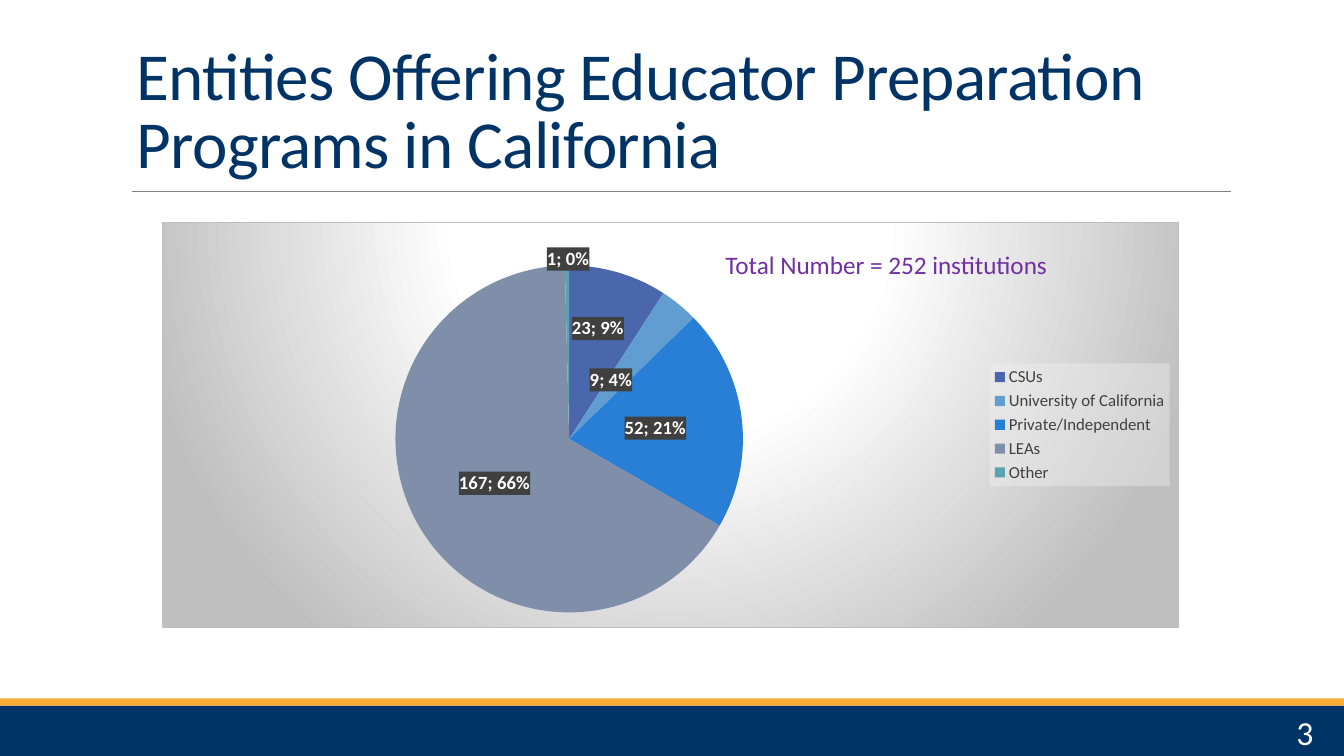
from dataclasses import dataclass
from typing import NamedTuple

from pptx import Presentation
from pptx.chart.data import CategoryChartData
from pptx.dml.color import RGBColor
from pptx.enum.chart import XL_CHART_TYPE, XL_LABEL_POSITION, XL_LEGEND_POSITION
from pptx.enum.shapes import MSO_CONNECTOR, MSO_SHAPE
from pptx.enum.text import MSO_ANCHOR, PP_ALIGN
from pptx.oxml import parse_xml
from pptx.oxml.ns import nsdecls, qn
from pptx.util import Cm, Pt


@dataclass(frozen=True)
class Theme:
    """Colours, type sizes and font of the slide."""
    font: str = "Calibri"
    navy: str = "003366"
    gold: str = "FAAC35"
    rule: str = "808080"
    white: str = "FFFFFF"
    purple: str = "7030A0"
    silver: str = "BFBFBF"
    dark: str = "404040"
    pale: str = "F2F2F2"
    title_size: float = 48
    number_size: float = 24
    note_size: float = 18
    label_size: float = 13.3
    legend_size: float = 12


class Box(NamedTuple):
    """A region of the slide in centimetres."""
    left: float
    top: float
    width: float
    height: float

    def lengths(self):
        """Return the four values as lengths."""
        return [Cm(value) for value in self]


THEME = Theme()
INSTITUTIONS = {
    "CSUs": (23, "4A66AC"),
    "University of California": (9, "629DD1"),
    "Private/Independent": (52, "297FD5"),
    "LEAs": (167, "7F8FA9"),
    "Other": (1, "5AA2AE"),
}
LABEL_SHIFTS = {0: (0.004, -0.067), 1: (-0.013, 0.02), 4: (0, -0.23)}


def style_font(font, size, colour, bold=False):
    """Apply the theme font with a size and colour."""
    font.name = THEME.font
    font.size = Pt(size)
    font.bold = bold
    font.color.rgb = RGBColor.from_string(colour)


def add_text(slide, box, text, size, colour, anchor=MSO_ANCHOR.TOP, align=PP_ALIGN.LEFT):
    """Add one wrapped paragraph and return it."""
    frame = slide.shapes.add_textbox(*box.lengths()).text_frame
    frame.word_wrap = True
    frame.vertical_anchor = anchor
    frame.text = text
    paragraph = frame.paragraphs[0]
    paragraph.alignment = align
    style_font(paragraph.runs[0].font, size, colour)
    return paragraph


def add_band(slide, box, colour):
    """Add a plain filled rectangle."""
    band = slide.shapes.add_shape(MSO_SHAPE.RECTANGLE, *box.lengths())
    band.shadow.inherit = False
    band.fill.solid()
    band.fill.fore_color.rgb = RGBColor.from_string(colour)
    band.line.fill.background()


def add_heading(slide, box):
    """Add the title and the rule beneath it."""
    title = add_text(slide, box, "Entities Offering Educator Preparation Programs in California",
                     THEME.title_size, THEME.navy, MSO_ANCHOR.BOTTOM)
    title.line_spacing = 0.85
    title.runs[0].font._element.set("spc", "-50")
    rule_y = Cm(box.top + box.height + 0.11)
    rule = slide.shapes.add_connector(MSO_CONNECTOR.STRAIGHT, Cm(box.left + 0.13), rule_y,
                                      Cm(box.left + box.width - 0.13), rule_y)
    rule.line.color.rgb = RGBColor.from_string(THEME.rule)
    rule.line.width = Pt(0.5)
    rule._element.spPr.append(parse_xml(f'<a:effectLst {nsdecls("a")}/>'))


def add_footer(slide, box, number):
    """Add the gold and navy bands with the slide number."""
    gold_height = 0.18
    navy_height = box.height - gold_height
    navy_top = box.top + gold_height
    add_band(slide, Box(box.left, navy_top, box.width, navy_height), THEME.navy)
    add_band(slide, Box(box.left, box.top, box.width, gold_height), THEME.gold)
    add_text(slide, Box(box.left + box.width - 4.15, navy_top + 0.15, 3.63, 1.02),
             number, THEME.number_size, THEME.white, MSO_ANCHOR.MIDDLE, PP_ALIGN.RIGHT)


def manual_layout(x, y, size=None, inner=False):
    """Return a chart layout in fractions of the chart area."""
    parts = [("layoutTarget", "inner")] if inner else []
    if size:
        parts += [("xMode", "edge"), ("yMode", "edge")]
    parts += [("x", x), ("y", y)]
    if size:
        parts += zip("wh", size)
    body = "".join(f'<c:{tag} val="{value}"/>' for tag, value in parts)
    return parse_xml(f'<c:layout {nsdecls("c")}><c:manualLayout>{body}</c:manualLayout></c:layout>')


def set_background(element, fill):
    """Put shape properties ahead of the text properties of a chart part."""
    properties = parse_xml(f'<c:spPr {nsdecls("c", "a")}>{fill}</c:spPr>')
    element.find(qn("c:txPr")).addprevious(properties)


def solid(colour, alpha):
    """Return a translucent fill, alpha in percent."""
    return (f'<a:solidFill><a:srgbClr val="{colour}"><a:alpha val="{alpha * 1000}"/>'
            '</a:srgbClr></a:solidFill>')


def format_labels(labels, element):
    """Show value and percentage in white on a dark patch."""
    style_font(labels.font, THEME.label_size, THEME.white, True)
    labels.position = XL_LABEL_POSITION.CENTER
    element.find(qn("c:showVal")).set("val", "1")
    element.find(qn("c:showPercent")).set("val", "1")
    separator = parse_xml(f'<c:separator {nsdecls("c")}>; </c:separator>')
    element.find(qn("c:showBubbleSize")).addnext(separator)
    set_background(element, solid(THEME.dark, 75))


def format_pie(series):
    """Colour the slices and place their labels."""
    series.smooth = False if hasattr(series, "smooth") else None
    for index, (_, colour) in enumerate(INSTITUTIONS.values()):
        fill = series.points[index].format.fill
        fill.solid()
        fill.fore_color.rgb = RGBColor.from_string(colour)
    format_labels(series.data_labels, series.data_labels._element)
    for index, shift in LABEL_SHIFTS.items():
        label = series.points[index].data_label
        label.position = XL_LABEL_POSITION.CENTER
        element = series.data_labels._element.xpath(f'c:dLbl[c:idx/@val="{index}"]')[0]
        format_labels(label, element)
        element.find(qn("c:idx")).addnext(manual_layout(*shift))


def format_legend(chart):
    """Place the legend at the right on a pale patch."""
    chart.has_legend = True
    legend = chart.legend
    legend.position = XL_LEGEND_POSITION.RIGHT
    legend.include_in_layout = False
    style_font(legend.font, THEME.legend_size, THEME.dark)
    element = legend._element
    for layout in element.findall(qn("c:layout")):
        element.remove(layout)
    element.find(qn("c:legendPos")).addnext(manual_layout(0.814, 0.348, (0.177, 0.303)))
    set_background(element, solid(THEME.pale, 39))


def add_institutions(slide, box):
    """Add the pie chart and the note of the total."""
    data = CategoryChartData()
    data.categories = list(INSTITUTIONS)
    data.add_series("Series 1", [count for count, _ in INSTITUTIONS.values()])
    chart = slide.shapes.add_chart(XL_CHART_TYPE.PIE, *box.lengths(), data).chart
    chart.has_title = False
    style_font(chart.font, 10, "000000")
    chart.plots[0].vary_by_categories = True
    format_pie(chart.plots[0].series[0])
    format_legend(chart)
    plot_area = chart._chartSpace.chart.plotArea
    for layout in plot_area.findall(qn("c:layout")):
        plot_area.remove(layout)
    plot_area.insert(0, manual_layout(0.229, 0.106, (0.342, 0.857), inner=True))
    stops = "".join(f'<a:gs pos="{place * 1000}"><a:srgbClr val="{colour}"/></a:gs>'
                    for place, colour in ((0, THEME.white), (39, THEME.white), (100, THEME.silver)))
    set_background(chart._chartSpace, f'<a:gradFill><a:gsLst>{stops}</a:gsLst><a:path path="circle">'
                   '<a:fillToRect l="50000" t="-80000" r="50000" b="180000"/></a:path></a:gradFill>'
                   f'<a:ln w="9525"><a:solidFill><a:srgbClr val="{THEME.silver}"/></a:solidFill></a:ln>')
    add_text(slide, Box(box.left + 13.94, box.top + 0.56, 10.31, 1.02),
             "Total Number = 252 institutions", THEME.note_size, THEME.purple)


def main():
    """Build and save the slide."""
    deck = Presentation()
    deck.slide_width, deck.slide_height = Cm(33.87), Cm(19.05)
    slide = deck.slides.add_slide(deck.slide_layouts[6])
    add_footer(slide, Box(0, 17.6, 33.87, 1.45), "3")
    add_heading(slide, Box(3.2, 0.76, 27.94, 3.96))
    add_institutions(slide, Box(4.09, 5.59, 25.63, 10.24))
    deck.save("out.pptx")


if __name__ == "__main__":
    main()
